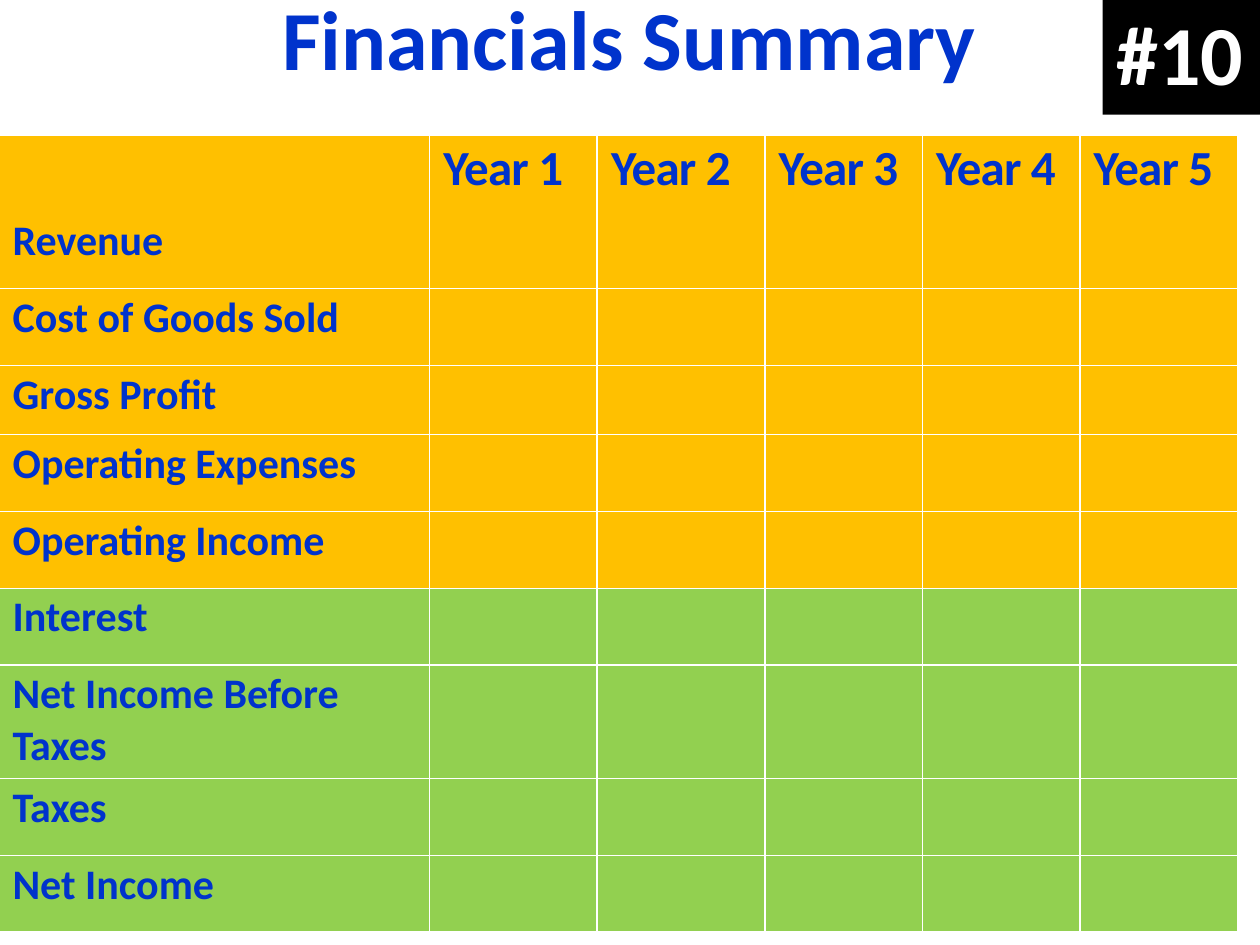
"""Build a five-year financials summary slide with a colour-banded table."""
from lxml import etree
from pptx import Presentation
from pptx.dml.color import RGBColor
from pptx.enum.shapes import MSO_SHAPE
from pptx.oxml.ns import qn
from pptx.util import Inches, Pt

RECT = MSO_SHAPE.RECTANGLE
FONT = "Calibri"
COLORS = {"blue": "0033CC", "gold": "FFC000", "green": "92D050",
          "white": "FFFFFF", "black": "000000"}
COLS = [3.42, 1.33, 1.33, 1.25, 1.25, 1.25]
ROWS = [
    (0.63, "gold", ""),
    (0.59, "gold", "Revenue"),
    (0.61, "gold", "Cost of Goods Sold"),
    (0.55, "gold", "Gross Profit"),
    (0.61, "gold", "Operating Expenses"),
    (0.61, "gold", "Operating Income"),
    (0.61, "green", "Interest"),
    (0.90, "green", "Net Income Before\nTaxes"),
    (0.61, "green", "Taxes"),
    (0.61, "green", "Net Income"),
]


def write(tf, text, size, color, before, spacing=0):
    tf.text = text
    tf.word_wrap = True
    tf.paragraphs[0].space_before = Pt(before)
    for p in tf.paragraphs:
        p.font.name, p.font.size, p.font.bold = FONT, Pt(size), True
        p.font.color.rgb = RGBColor.from_string(COLORS[color])
        for r in p.runs:
            r.font._element.set("spc", str(spacing))


def border(cell, side, width):
    ln = etree.SubElement(cell._tc.get_or_add_tcPr(), qn(f"a:ln{side}"),
                          w=str(Pt(width)))
    if width:
        fill = etree.SubElement(ln, qn("a:solidFill"))
        etree.SubElement(fill, qn("a:srgbClr"), val=COLORS["white"])
    else:
        etree.SubElement(ln, qn("a:noFill"))


prs = Presentation()
prs.slide_width, prs.slide_height = Inches(10), Inches(7.5)
s = prs.slides.add_slide(prs.slide_layouts[6])

table = s.shapes.add_table(len(ROWS), len(COLS), Inches(-0.01), Inches(1.07),
                           Inches(sum(COLS)), Inches(sum(row[0] for row in ROWS))).table
for column, width in zip(table.columns, COLS):
    column.width = Inches(width)

last = len(ROWS) - 1
for i, (height, color, label) in enumerate(ROWS):
    table.rows[i].height = Inches(height)
    for j in range(len(COLS)):
        cell = table.cell(i, j)
        cell.margin_left, cell.margin_top = Inches(0.11), Inches(0.01 if i == 1 else 0.03)
        cell.margin_right = cell.margin_bottom = 0
        widths = {"L": 1, "R": 1, "T": 0 if i == 1 else 1,
                  "B": 0 if i == 0 else 1.5 if i == last else 1}
        for side, width in widths.items():
            border(cell, side, width)
        cell.fill.solid()
        cell.fill.fore_color.rgb = RGBColor.from_string(COLORS[color])
        if i == 0 and j:
            write(cell.text_frame, f"Year {j}", 28, "blue", 1.8, -45)
        elif j == 0 and label:
            write(cell.text_frame, label, 24, "blue", 0.7 if i == 1 else 2.3)

badge = s.shapes.add_shape(RECT, Inches(8.75), 0, Inches(1.25), Inches(0.91))
badge.shadow.inherit = False
badge.fill.solid()
badge.fill.fore_color.rgb = RGBColor.from_string(COLORS["black"])
badge.line.fill.background()

for text, color, left, top, width in [
    ("Financials Summary", "blue", 2.22, -0.12, 5.55),
    ("#10", "white", 8.84, 0, 1.04),
]:
    sp = s.shapes.add_textbox(Inches(left), Inches(top), Inches(width), Inches(0.83))
    tf = sp.text_frame
    tf.margin_left, tf.margin_top = Inches(0.02), Inches(0.01)
    tf.margin_right = tf.margin_bottom = 0
    write(tf, text, 48, color, 1)

prs.save("out.pptx")
